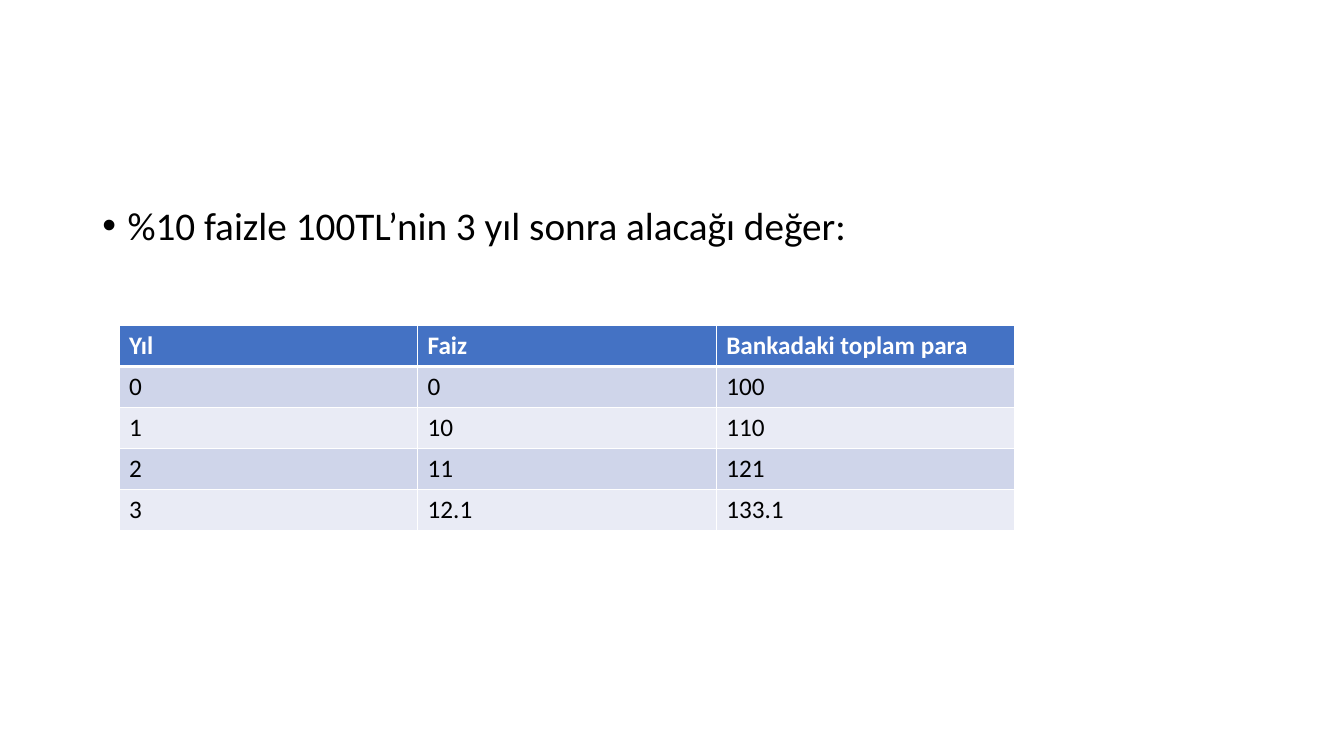
from dataclasses import dataclass

from lxml.etree import SubElement
from pptx import Presentation
from pptx.dml.color import RGBColor
from pptx.oxml.ns import qn
from pptx.slide import Slide
from pptx.table import _Cell as Cell
from pptx.text.text import _Paragraph as Paragraph
from pptx.util import Emu, Inches, Pt

GRID_COLUMNS, GRID_ROWS = 160, 90
SLIDE_WIDTH, SLIDE_HEIGHT = Inches(13.33), Inches(7.5)
WHITE, BLACK = "FFFFFF", "000000"
HEADER_FILL = "4472C4"
BAND_FILLS = ("CFD5EA", "E9EBF5")
THIN, THICK = 1, 3

STATEMENT = "%10 faizle 100TL’nin 3 yıl sonra alacağı değer:"
INTEREST_ROWS = (
    ("Yıl", "Faiz", "Bankadaki toplam para"),
    ("0", "0", "100"),
    ("1", "10", "110"),
    ("2", "11", "121"),
    ("3", "12.1", "133.1"),
)


@dataclass(frozen=True)
class Area:
    """A rectangle in columns and rows of the slide grid."""
    column: float
    row: float
    columns: float
    rows: float

    def lengths(self) -> tuple[Emu, Emu, Emu, Emu]:
        across, down = SLIDE_WIDTH / GRID_COLUMNS, SLIDE_HEIGHT / GRID_ROWS
        return (Emu(round(self.column * across)), Emu(round(self.row * down)),
                Emu(round(self.columns * across)), Emu(round(self.rows * down)))


@dataclass(frozen=True)
class RowStyle:
    fill: str
    text: str
    bold: bool
    top: int
    bottom: int


STATEMENT_AREA = Area(11, 24, 138, 57.12)
TABLE_AREA = Area(14.16, 38.76, 106.68, 24.36)


def color(value: str) -> RGBColor:
    return RGBColor.from_string(value)


def write(paragraph: Paragraph, text: str, text_color: str, **font_format) -> None:
    run = paragraph.add_run()
    run.text = text
    run.font.color.rgb = color(text_color)
    for name, value in {"name": "Calibri", **font_format}.items():
        setattr(run.font, name, value)


def add_bullet(paragraph: Paragraph) -> None:
    properties = paragraph._p.get_or_add_pPr()
    properties.set("marL", str(Inches(0.25)))
    properties.set("indent", str(-Inches(0.25)))
    SubElement(properties, qn("a:buFont"), typeface="Arial")
    SubElement(properties, qn("a:buChar"), char="•")


def add_statement(slide: Slide) -> None:
    frame = slide.shapes.add_textbox(*STATEMENT_AREA.lengths()).text_frame
    frame.word_wrap = True
    paragraph = frame.paragraphs[0]
    for name, value in {"line_spacing": 0.9, "space_before": Pt(10)}.items():
        setattr(paragraph, name, value)
    add_bullet(paragraph)
    write(paragraph, STATEMENT, BLACK, size=Pt(28))


def set_borders(cell: Cell, top: int, bottom: int) -> None:
    """Draw white borders; their elements must come before the cell's fill."""
    properties = cell._tc.get_or_add_tcPr()
    widths = {"a:lnL": THIN, "a:lnR": THIN, "a:lnT": top, "a:lnB": bottom}
    for position, (side, width) in enumerate(widths.items()):
        line = SubElement(properties, qn(side), w=str(Pt(width)))
        SubElement(SubElement(line, qn("a:solidFill")), qn("a:srgbClr"), val=WHITE)
        properties.insert(position, line)


def row_style(index: int) -> RowStyle:
    if index == 0:
        return RowStyle(HEADER_FILL, WHITE, True, THIN, THICK)
    band = BAND_FILLS[(index - 1) % len(BAND_FILLS)]
    return RowStyle(band, BLACK, False, THICK if index == 1 else THIN, THIN)


def add_interest_table(slide: Slide) -> None:
    table = slide.shapes.add_table(len(INTEREST_ROWS), len(INTEREST_ROWS[0]),
                                   *TABLE_AREA.lengths()).table
    for row_index, texts in enumerate(INTEREST_ROWS):
        style = row_style(row_index)
        for column_index, text in enumerate(texts):
            cell = table.cell(row_index, column_index)
            cell.fill.solid()
            cell.fill.fore_color.rgb = color(style.fill)
            set_borders(cell, style.top, style.bottom)
            write(cell.text_frame.paragraphs[0], text, style.text,
                  size=Pt(18), bold=style.bold)


def main() -> None:
    presentation = Presentation()
    presentation.slide_width, presentation.slide_height = SLIDE_WIDTH, SLIDE_HEIGHT
    slide = presentation.slides.add_slide(presentation.slide_layouts[6])
    add_statement(slide)
    add_interest_table(slide)
    presentation.save("out.pptx")


if __name__ == "__main__":
    main()
